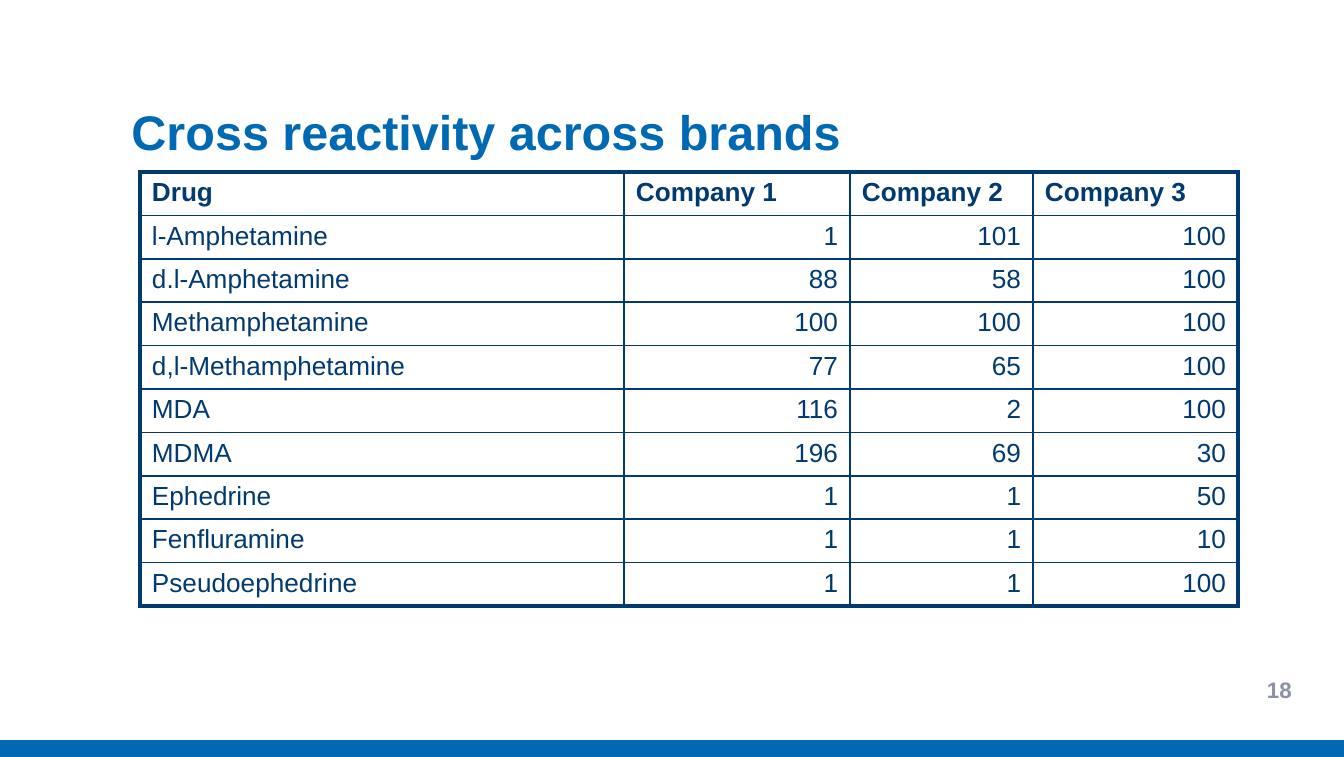
import dataclasses

import lxml.etree
import pptx
import pptx.dml.color
import pptx.enum.shapes
import pptx.enum.text
import pptx.oxml.ns
import pptx.util

EMU_PER_PX = 914400 / 134.4
FONT = "Arial"
COLORS = {"blue": "0069B3", "navy": "003A70", "gray": "8C91A4", "white": "FFFFFF"}
LEFT = pptx.enum.text.PP_ALIGN.LEFT
RIGHT = pptx.enum.text.PP_ALIGN.RIGHT
COLUMN_WIDTHS = [484, 226, 183, 205]
ROW_HEIGHT = 43
OUTER_BORDER = 2.25
INNER_BORDER = 1


@dataclasses.dataclass(frozen=True)
class Box:
    left: int
    top: int
    width: int
    height: int

    def emu(self) -> list[int]:
        return [px(value) for value in dataclasses.astuple(self)]


@dataclasses.dataclass(frozen=True)
class DrugRow:
    drug: str
    reactivities: tuple[int, int, int]


DRUG_ROWS = [
    DrugRow("l-Amphetamine", (1, 101, 100)),
    DrugRow("d.l-Amphetamine", (88, 58, 100)),
    DrugRow("Methamphetamine", (100, 100, 100)),
    DrugRow("d,l-Methamphetamine", (77, 65, 100)),
    DrugRow("MDA", (116, 2, 100)),
    DrugRow("MDMA", (196, 69, 30)),
    DrugRow("Ephedrine", (1, 1, 50)),
    DrugRow("Fenfluramine", (1, 1, 10)),
    DrugRow("Pseudoephedrine", (1, 1, 100)),
]


def px(value: int) -> int:
    return round(value * EMU_PER_PX)


def rgb(name: str) -> pptx.dml.color.RGBColor:
    return pptx.dml.color.RGBColor.from_string(COLORS[name])


def write_text(text_frame, text: str, size: int, color: str, bold: bool, alignment) -> None:
    text_frame.text = text
    paragraph = text_frame.paragraphs[0]
    paragraph.alignment = alignment
    paragraph.space_before = pptx.util.Pt(0)
    font = paragraph.runs[0].font
    font.name = FONT
    font.size = pptx.util.Pt(size)
    font.bold = bold
    font.color.rgb = rgb(color)


def add_footer_bar(slide, box: Box) -> None:
    shape = slide.shapes.add_shape(pptx.enum.shapes.MSO_SHAPE.RECTANGLE, *box.emu())
    shape.shadow.inherit = False
    shape.fill.solid()
    shape.fill.fore_color.rgb = rgb("blue")
    shape.line.fill.background()


def set_title(slide, box: Box, text: str) -> None:
    title = slide.shapes.title
    title.left, title.top, title.width, title.height = box.emu()
    text_frame = title.text_frame
    text_frame.word_wrap = True
    text_frame.auto_size = pptx.enum.text.MSO_AUTO_SIZE.NONE
    text_frame.vertical_anchor = pptx.enum.text.MSO_ANCHOR.BOTTOM
    write_text(text_frame, text, 26, "blue", True, LEFT)


def add_page_number(slide, box: Box, text: str) -> None:
    text_frame = slide.shapes.add_textbox(*box.emu()).text_frame
    text_frame.word_wrap = True
    text_frame.vertical_anchor = pptx.enum.text.MSO_ANCHOR.MIDDLE
    write_text(text_frame, text, 12, "gray", True, RIGHT)


def set_borders(cell, outer_sides: dict[str, bool]) -> None:
    properties = cell._tc.get_or_add_tcPr()
    for index, (side, is_outer) in enumerate(outer_sides.items()):
        width = pptx.util.Pt(OUTER_BORDER if is_outer else INNER_BORDER)
        line = lxml.etree.Element(pptx.oxml.ns.qn(f"a:ln{side}"), w=str(int(width)))
        fill = lxml.etree.SubElement(line, pptx.oxml.ns.qn("a:solidFill"))
        lxml.etree.SubElement(fill, pptx.oxml.ns.qn("a:srgbClr"), val=COLORS["navy"])
        properties.insert(index, line)


def add_reactivity_table(slide, left: int, top: int) -> None:
    header = ["Drug"] + [f"Company {number}" for number in range(1, 4)]
    rows = [header] + [[row.drug, *map(str, row.reactivities)] for row in DRUG_ROWS]
    last_row, last_column = len(rows) - 1, len(header) - 1
    box = Box(left, top, sum(COLUMN_WIDTHS), ROW_HEIGHT * len(rows))
    table = slide.shapes.add_table(len(rows), len(header), *box.emu()).table
    table.first_row = False
    table.horz_banding = False
    for column, width in zip(table.columns, COLUMN_WIDTHS):
        column.width = px(width)
    for row_index, values in enumerate(rows):
        table.rows[row_index].height = px(ROW_HEIGHT)
        for column_index, value in enumerate(values):
            cell = table.cell(row_index, column_index)
            cell.margin_left = cell.margin_right = px(12)
            cell.margin_top = cell.margin_bottom = px(6)
            cell.fill.solid()
            cell.fill.fore_color.rgb = rgb("white")
            is_header = row_index == 0
            alignment = RIGHT if column_index and not is_header else LEFT
            write_text(cell.text_frame, value, 14, "navy", is_header, alignment)
            set_borders(cell, {
                "L": column_index == 0,
                "R": column_index == last_column,
                "T": is_header,
                "B": row_index == last_row,
            })


def main() -> None:
    presentation = pptx.Presentation()
    presentation.slide_width = px(1344)
    presentation.slide_height = px(757)
    slide = presentation.slides.add_slide(presentation.slide_layouts[5])
    add_footer_bar(slide, Box(0, 740, 1344, 17))
    set_title(slide, Box(118, 94, 1067, 73), "Cross reactivity across brands")
    add_page_number(slide, Box(1206, 669, 99, 40), "18")
    add_reactivity_table(slide, 140, 172)
    presentation.save("out.pptx")


if __name__ == "__main__":
    main()
